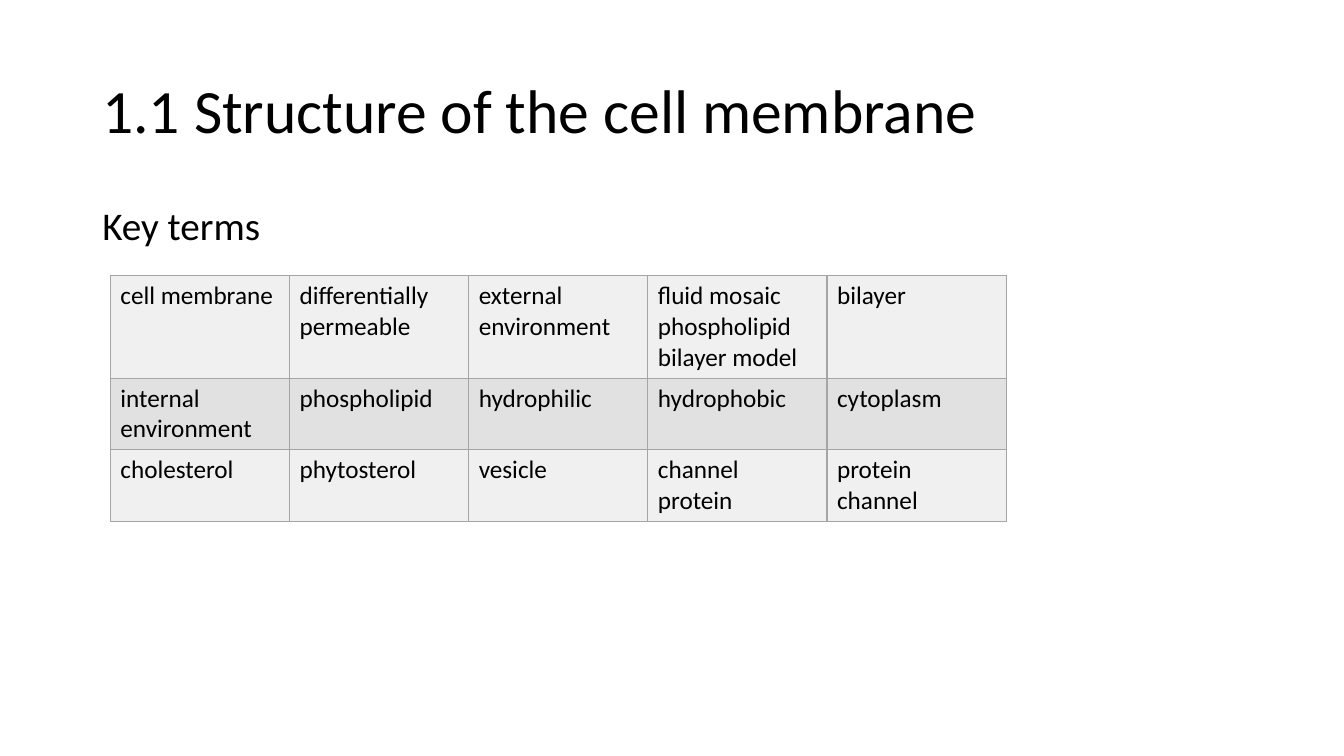
from lxml import etree
from pptx import Presentation
from pptx.dml.color import RGBColor
from pptx.enum.text import MSO_ANCHOR
from pptx.oxml.ns import qn
from pptx.util import Pt

TOP = MSO_ANCHOR.TOP
MIDDLE = MSO_ANCHOR.MIDDLE
FONT = "Calibri"
BLACK = "000000"
GREY = "A5A5A5"
BANDS = ["F0F0F0", "E1E1E1"]
WIDTH = 128
HEIGHTS = [73.1, 51.1, 51.1]
TERMS = [
    ["cell membrane", "differentially permeable", "external environment",
     "fluid mosaic phospholipid bilayer model", "bilayer"],
    ["internal environment", "phospholipid", "hydrophilic", "hydrophobic", "cytoplasm"],
    ["cholesterol", "phytosterol", "vesicle", "channel protein", "protein channel"],
]


def color(code):
    return RGBColor.from_string(code)


def style(frame, size):
    for para in frame.paragraphs:
        for run in para.runs:
            run.font.name = FONT
            run.font.size = Pt(size)
            run.font.color.rgb = color(BLACK)


def add_text(slide, text, box, size, anchor, before=0):
    frame = slide.shapes.add_textbox(*map(Pt, box)).text_frame
    frame.word_wrap = True
    frame.vertical_anchor = anchor
    frame.text = text
    para = frame.paragraphs[0]
    para.line_spacing = 0.9
    para.space_before = Pt(before)
    style(frame, size)


def add_border(cell):
    props = cell._tc.get_or_add_tcPr()
    for side in ("a:lnL", "a:lnR", "a:lnT", "a:lnB"):
        line = etree.SubElement(props, qn(side), w=str(Pt(1)))
        fill = etree.SubElement(line, qn("a:solidFill"))
        etree.SubElement(fill, qn("a:srgbClr"), val=GREY)


def add_terms(slide, left, top):
    count = len(TERMS[0])
    frame = slide.shapes.add_table(
        len(TERMS), count, Pt(left), Pt(top), Pt(WIDTH * count), Pt(sum(HEIGHTS)))
    table = frame.table
    table.first_row = False
    for column in table.columns:
        column.width = Pt(WIDTH)
    for i, (row, terms) in enumerate(zip(table.rows, TERMS)):
        row.height = Pt(HEIGHTS[i])
        for cell, term in zip(row.cells, terms):
            cell.text_frame.text = term
            style(cell.text_frame, 18)
            add_border(cell)
            cell.fill.solid()
            cell.fill.fore_color.rgb = color(BANDS[i % 2])


def main():
    deck = Presentation()
    deck.slide_width = Pt(960)
    deck.slide_height = Pt(540)
    slide = deck.slides.add_slide(deck.slide_layouts[6])
    add_text(slide, "1.1 Structure of the cell membrane", (66, 28.8, 828, 104.4), 44, MIDDLE)
    add_text(slide, "Key terms", (66, 144, 828, 342.7), 28, TOP, 10)
    add_terms(slide, 78.8, 197)
    deck.save("out.pptx")


if __name__ == "__main__":
    main()
